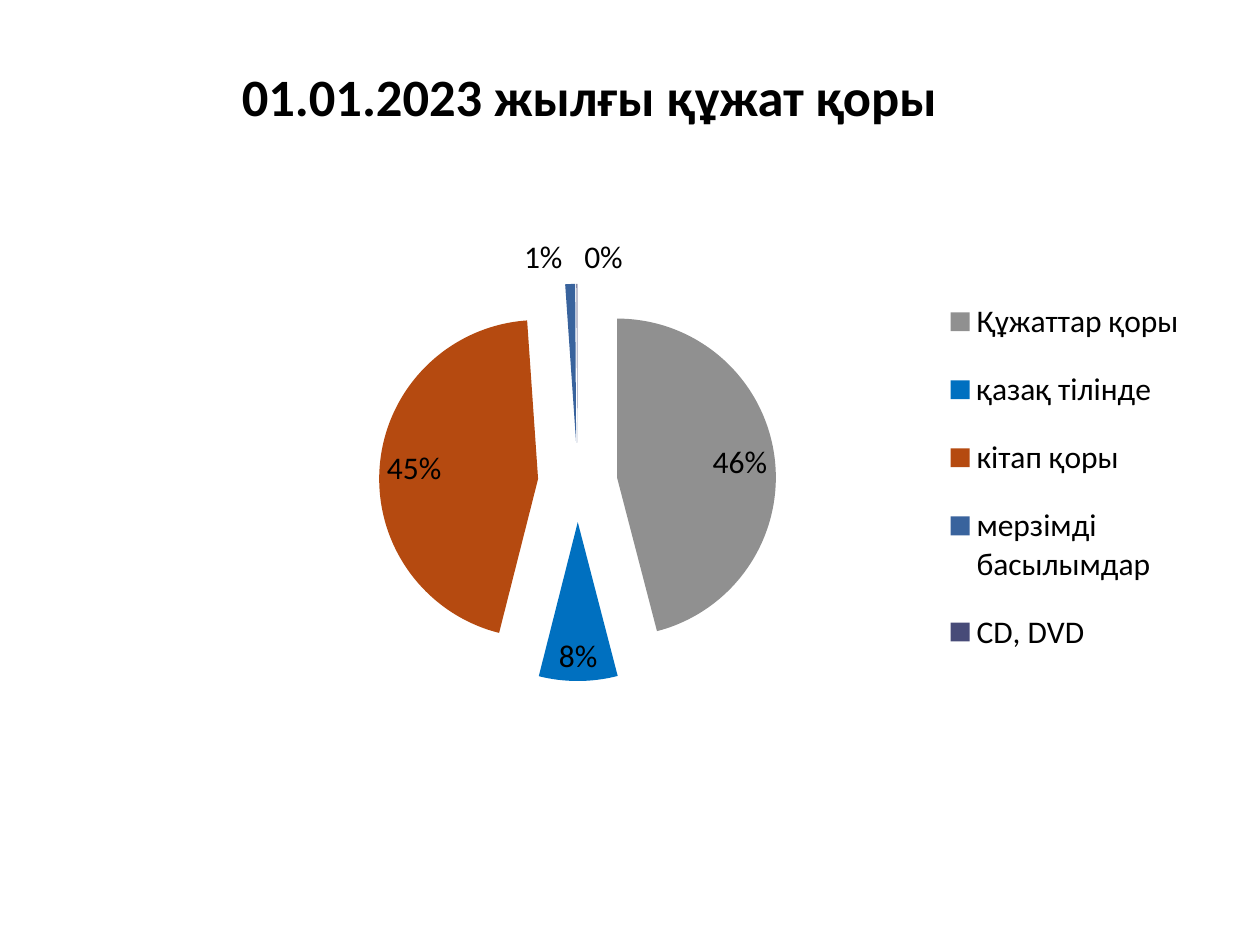
import pptx
import pptx.chart.data
import pptx.dml.color
import pptx.enum.chart
import pptx.enum.text
import pptx.oxml
import pptx.oxml.ns
import pptx.util
from pptx.util import Inches

qn = pptx.oxml.ns.qn
nsdecls = pptx.oxml.ns.nsdecls("c")


def color(hex_string):
    return pptx.dml.color.RGBColor.from_string(hex_string)


def manual_layout(x, y, width, height, target=""):
    """Return a c:layout element; lengths are fractions of the chart."""
    return pptx.oxml.parse_xml(
        f'<c:layout {nsdecls}><c:manualLayout>{target}'
        '<c:xMode val="edge"/><c:yMode val="edge"/>'
        f'<c:x val="{x}"/><c:y val="{y}"/><c:w val="{width}"/><c:h val="{height}"/>'
        '</c:manualLayout></c:layout>'
    )


deck = pptx.Presentation()
deck.slide_width, deck.slide_height = Inches(10), Inches(7.5)
page = deck.slides.add_slide(deck.slide_layouts[5])

# Pie of the document collection; the last share is a sliver that rounds to 0%
slices = [
    ("Құжаттар қоры", 46, "909090"),
    ("қазақ тілінде", 8, "0070C0"),
    ("кітап қоры", 45, "B54A10"),
    ("мерзімді басылымдар", 1, "39639D"),
    ("CD, DVD", 0.1, "474B78"),
]
chart_data = pptx.chart.data.CategoryChartData()
chart_data.categories = [name for name, share, fill in slices]
chart_data.add_series("Series 1", [share for name, share, fill in slices])
chart = page.shapes.add_chart(
    pptx.enum.chart.XL_CHART_TYPE.PIE,
    Inches(1.02), Inches(1.41), Inches(8.59), Inches(4.44), chart_data,
).chart
chart.has_title = False
chart.font.name = "Calibri"
chart.font.size = pptx.util.Pt(18)
chart.font.color.rgb = color("000000")
chart.has_legend = True
chart.legend.position = pptx.enum.chart.XL_LEGEND_POSITION.RIGHT
chart.legend.include_in_layout = False

pie = chart.plots[0]
pie.vary_by_categories = True
pie_series = pie.series[0]
for index, (name, share, fill) in enumerate(slices):
    point_format = pie_series.points[index].format
    point_format.fill.solid()
    point_format.fill.fore_color.rgb = color(fill)

labels = pie_series.data_labels
labels.show_percentage = True
labels.show_value = False
labels.number_format = "0%"
labels.number_format_is_linked = False
labels.position = pptx.enum.chart.XL_LABEL_POSITION.BEST_FIT

# Pull every slice out from the centre
chart_space = chart._chartSpace
first_point = next(chart_space.iter(qn("c:dPt")))
first_point.addprevious(pptx.oxml.parse_xml(f'<c:explosion {nsdecls} val="25"/>'))

# Place the plot area and the legend
plot_area = next(chart_space.iter(qn("c:plotArea")))
legend = next(chart_space.iter(qn("c:legend")))
for parent in (plot_area, legend):
    for layout in parent.findall(qn("c:layout")):
        parent.remove(layout)
plot_area.insert(0, manual_layout(0.08, 0.19, 0.67, 0.71, '<c:layoutTarget val="inner"/>'))
legend.find(qn("c:legendPos")).addnext(manual_layout(0.74, 0.17, 0.25, 0.73))

# Title
title = page.shapes.title
title.left, title.top = Inches(0.94), Inches(0.46)
title.width, title.height = Inches(7.48), Inches(0.61)
frame = title.text_frame
frame.text = "01.01.2023 жылғы құжат қоры"
frame.word_wrap = True
frame.auto_size = pptx.enum.text.MSO_AUTO_SIZE.SHAPE_TO_FIT_TEXT
frame.vertical_anchor = pptx.enum.text.MSO_ANCHOR.TOP
para = frame.paragraphs[0]
para.alignment = pptx.enum.text.PP_ALIGN.CENTER
span = para.runs[0]
span.font.name = "Calibri"
span.font.size = pptx.util.Pt(30)
span.font.bold = True
span.font.color.rgb = color("000000")

deck.save("out.pptx")
